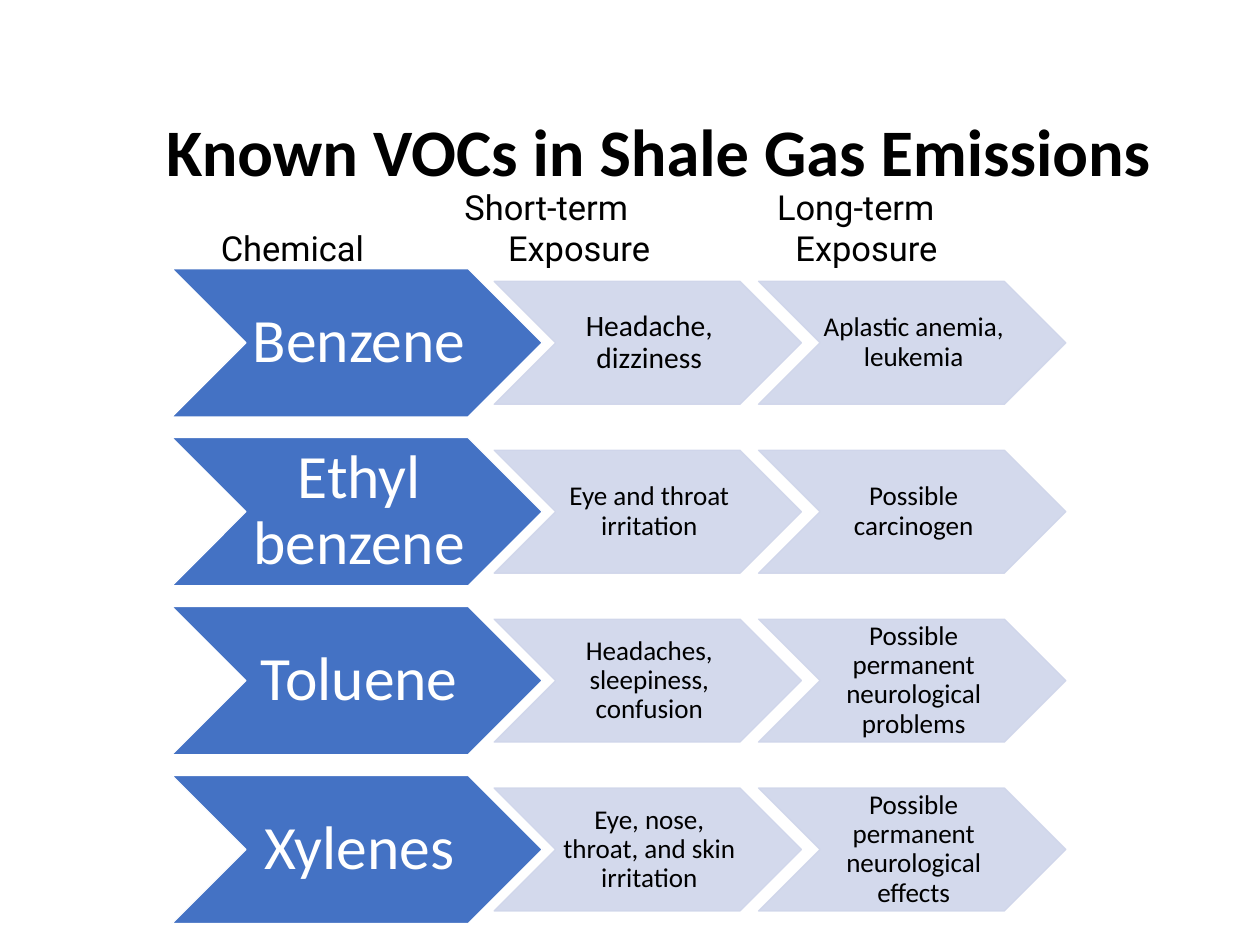
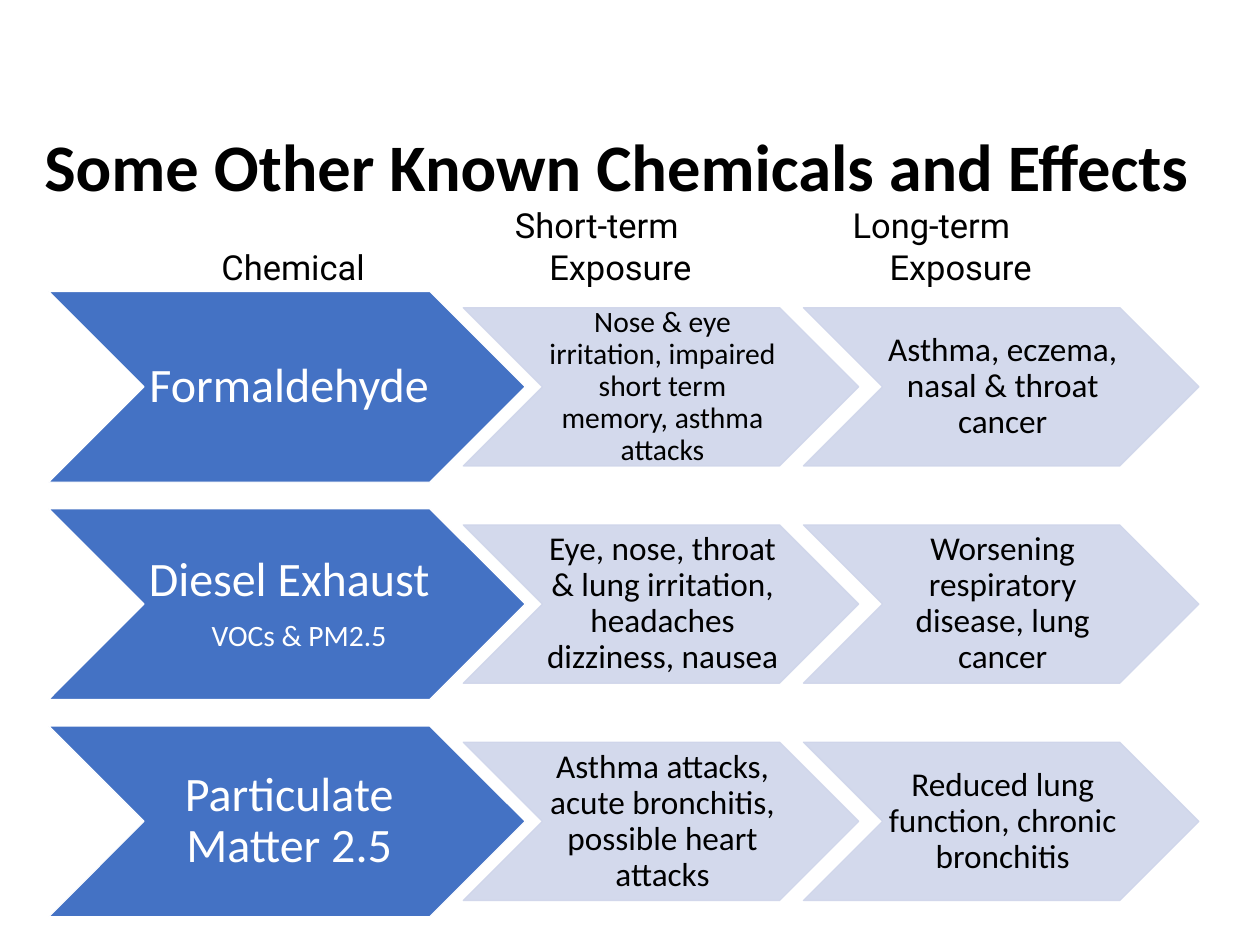
import pptx
import pptx.util
import pptx.dml.color
import pptx.enum.shapes
import pptx.enum.text
import pptx.oxml.ns
import lxml.etree

Pt = pptx.util.Pt
qn = pptx.oxml.ns.qn

COLORS = {"text": "000000", "head": "4472C4", "head_text": "FFFFFF",
          "head_line": "FFFFFF", "effect": "CFD5EA"}
BODY_FONT, LABEL_FONT = "Calibri", "Roboto"

ASPECT = 2.5          # chevron width / height
ROW_PITCH = 1.14      # row distance / head height
EFFECT_SCALE = 0.83   # effect size / head size
HEAD_OVERLAP, EFFECT_OVERLAP = 0.13, 0.14


def rgb(name):
    return pptx.dml.color.RGBColor.from_string(COLORS[name])


def set_font(p, name, size, color, bold=False):
    p.font.name, p.font.size, p.font.bold = name, Pt(size), bold
    p.font.color.rgb = rgb(color)


def set_insets(tf, left, top, right, bottom):
    tf.margin_left, tf.margin_top = Pt(left), Pt(top)
    tf.margin_right, tf.margin_bottom = Pt(right), Pt(bottom)


def set_alpha(fill_parent, percent):
    color = fill_parent.find(qn("a:solidFill"))[0]
    lxml.etree.SubElement(color, qn("a:alpha")).set("val", str(percent * 1000))


def add_title(slide, x, y, w, text):
    tf = slide.shapes.add_textbox(Pt(x), Pt(y), Pt(w), Pt(73)).text_frame
    tf.word_wrap = False
    tf.auto_size = pptx.enum.text.MSO_AUTO_SIZE.SHAPE_TO_FIT_TEXT
    p = tf.paragraphs[0]
    p.text = text
    set_font(p, BODY_FONT, 54, "text", bold=True)


def add_column_labels(slide, x, y, w, term_tabs, exposure_tabs):
    """Two lines of labels; tab positions are measured from x."""
    tf = slide.shapes.add_textbox(Pt(x), Pt(y), Pt(w), Pt(75)).text_frame
    tf.word_wrap = True
    set_insets(tf, 0, 3.6, 0, 3.6)
    lines = (("\tShort-term\tLong-term", term_tabs),
             ("Chemical\tExposure\tExposure", exposure_tabs))
    for i, (text, tabs) in enumerate(lines):
        p = tf.add_paragraph() if i else tf.paragraphs[0]
        p.text = text
        tab_list = lxml.etree.SubElement(p._p.get_or_add_pPr(), qn("a:tabLst"))
        for pos in tabs:
            tab = lxml.etree.SubElement(tab_list, qn("a:tab"))
            tab.set("pos", str(Pt(pos)))
            tab.set("algn", "l")
        set_font(p, LABEL_FONT, 28, "text")


def add_chevron(slide, x, y, h, text, size, fill, line, color, inset):
    sp = slide.shapes.add_shape(pptx.enum.shapes.MSO_SHAPE.CHEVRON,
                                Pt(x), Pt(y), Pt(ASPECT * h), Pt(h))
    sp.shadow.inherit = False
    sp.fill.solid()
    sp.fill.fore_color.rgb = rgb(fill)
    sp.line.color.rgb = rgb(line)
    sp.line.width = Pt(1)
    tf = sp.text_frame
    tf.word_wrap = True
    tf.vertical_anchor = pptx.enum.text.MSO_ANCHOR.MIDDLE
    set_insets(tf, inset, 2, 0, 2)
    p = tf.paragraphs[0]
    p.text = text
    style_line(p, size, color)
    return sp


def style_line(p, size, color):
    p.alignment = pptx.enum.text.PP_ALIGN.CENTER
    p.line_spacing = 0.9
    set_font(p, BODY_FONT, size, color)


def add_subline(tf, text):
    p = tf.add_paragraph()
    p.text = text
    p.space_before, p.space_after = Pt(11), Pt(5)
    p._p.get_or_add_pPr().set("marL", str(Pt(16)))
    style_line(p, 24, "head_text")


def add_row(slide, x, y, h, head_size, head, effects):
    """One chemical and its effects; head is a name with an optional subline."""
    name, *sublines = head
    sp = add_chevron(slide, x, y, h, name, head_size,
                     "head", "head_line", "head_text", 3.6)
    for subline in sublines:
        add_subline(sp.text_frame, subline)
    effect_h = EFFECT_SCALE * h
    effect_x = x + ASPECT * h * (1 - HEAD_OVERLAP)
    for text, size in effects:
        sp = add_chevron(slide, effect_x, y + (h - effect_h) / 2, effect_h,
                         text, size, "effect", "effect", "text", 2.4)
        set_alpha(sp._element.spPr, 90)
        set_alpha(sp._element.spPr.find(qn("a:ln")), 90)
        effect_x += ASPECT * effect_h * (1 - EFFECT_OVERLAP)


def add_chemical_slide(prs, title, labels, rows_box, head_size, rows):
    """rows_box is the left, top and head height of the first row."""
    slide = prs.slides.add_slide(prs.slide_layouts[6])
    add_title(slide, *title)
    x, y, h = rows_box
    for i, (head, *effects) in enumerate(rows):
        add_row(slide, x, y + i * ROW_PITCH * h, h, head_size, head, effects)
    add_column_labels(slide, *labels)


VOCS = [
    (["Benzene"], ("Headache, dizziness", 24), ("Aplastic anemia, leukemia", 22)),
    (["Ethyl benzene"], ("Eye and throat irritation", 22),
     ("Possible carcinogen", 22)),
    (["Toluene"], ("Headaches, sleepiness, confusion", 22),
     ("Possible permanent neurological problems", 22)),
    (["Xylenes"], ("Eye, nose, throat, and skin irritation", 22),
     ("Possible permanent neurological effects", 22)),
]

OTHER_CHEMICALS = [
    (["Formaldehyde"],
     ("Nose & eye irritation, impaired short term memory, asthma attacks", 24),
     ("Asthma, eczema, nasal & throat cancer", 27)),
    (["Diesel Exhaust", "VOCs & PM2.5"],
     ("Eye, nose, throat & lung irritation, headaches dizziness, nausea", 27),
     ("Worsening respiratory disease, lung cancer", 27)),
    (["Particulate Matter 2.5"],
     ("Asthma attacks, acute bronchitis, possible heart attacks", 27),
     ("Reduced lung function, chronic bronchitis", 27)),
]


def main():
    prs = pptx.Presentation()
    prs.slide_width, prs.slide_height = Pt(1024), Pt(768)
    add_chemical_slide(
        prs, (128, 85.5, 823, "Known VOCs in Shale Gas Emissions"),
        (179.5, 147.5, 640, (198, 452), (233.5, 467)),
        (139.7, 218.4, 120.4), 50, VOCS)
    add_chemical_slide(
        prs, (29, 98, 955, "Some Other Known Chemicals and Effects"),
        (180, 162.5, 690, (238.5, 513), (266.5, 543)),
        (39.6, 236.9, 154.9), 39, OTHER_CHEMICALS)
    prs.save("out.pptx")


if __name__ == "__main__":
    main()
